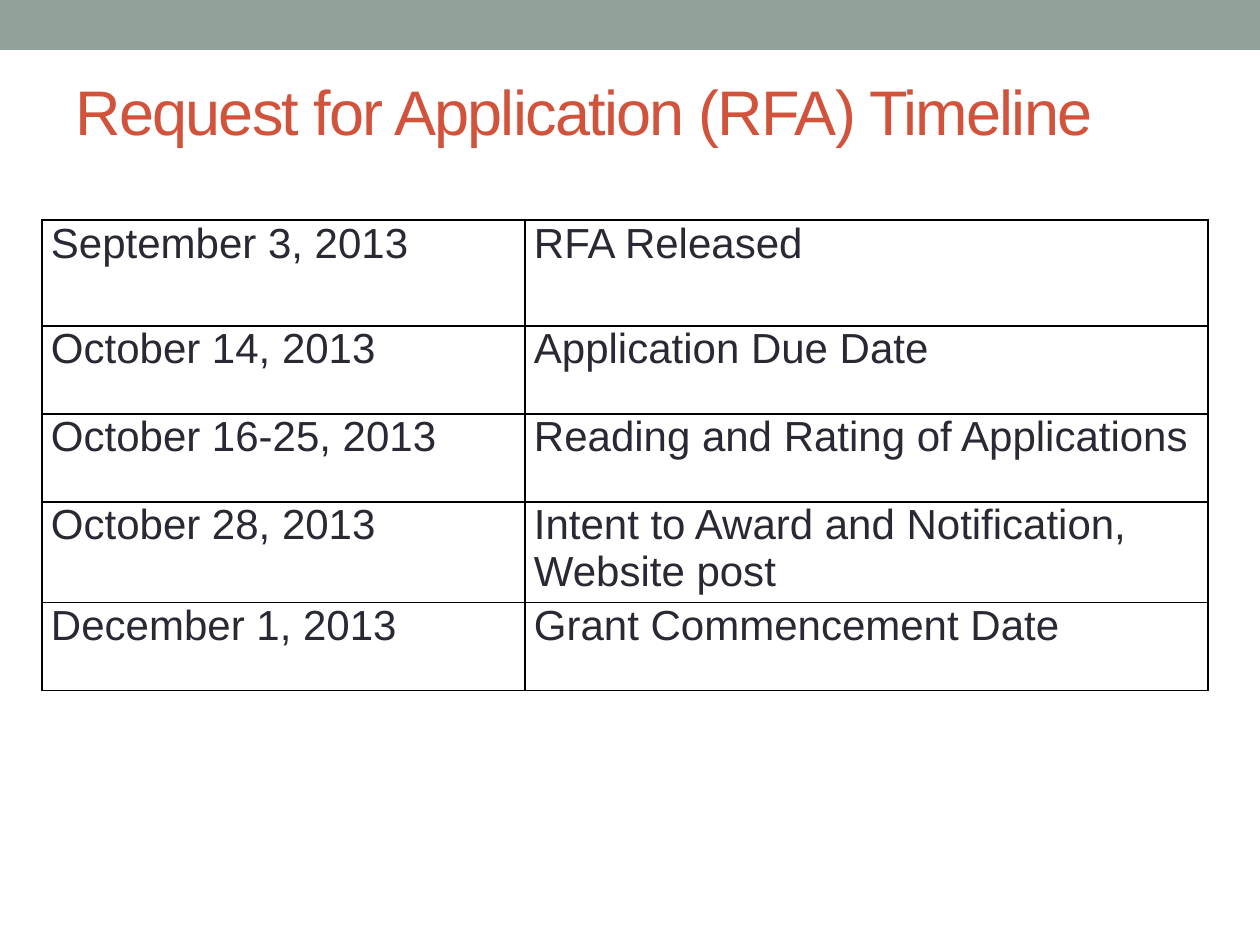
from pptx import Presentation
from pptx.dml.color import RGBColor
from pptx.enum.shapes import MSO_SHAPE as SHAPE
from pptx.enum.text import MSO_ANCHOR as ANCHOR
from pptx.oxml import parse_xml
from pptx.oxml.ns import nsdecls
from pptx.util import Pt

EMU_PER_PX = 914400 / 126
TIMELINE = [
    ("September 3, 2013", "RFA Released"),
    ("October 14, 2013", "Application Due Date"),
    ("October 16-25, 2013", "Reading and Rating of Applications"),
    ("October 28, 2013", "Intent to Award and Notification, Website post"),
    ("December 1, 2013", "Grant Commencement Date"),
]


def px(n):
    return round(n * EMU_PER_PX)


def rgb(value):
    return RGBColor.from_string(value)


class Deck:
    """Holds the style and the current slide, and draws its elements."""

    font = "Arial"
    bar_color = "93A299"
    title_color = "D2533C"
    text_color = "292934"
    border_color = "000000"

    def __init__(self, width, height):
        self.prs = Presentation()
        self.prs.slide_width, self.prs.slide_height = px(width), px(height)
        self.s = self.prs.slides.add_slide(self.prs.slide_layouts[6])

    def text(self, tf, text, size, color):
        tf.text = text
        r = tf.paragraphs[0].runs[0]
        r.font.name, r.font.size = self.font, Pt(size)
        r.font.color.rgb = rgb(color)
        return r

    def bar(self, x, y, w, h):
        sp = self.s.shapes.add_shape(SHAPE.RECTANGLE, px(x), px(y), px(w), px(h))
        sp.shadow.inherit = False
        sp.fill.solid()
        sp.fill.fore_color.rgb = rgb(self.bar_color)
        sp.line.fill.background()

    def title(self, text, x, y, w, h):
        sp = self.s.shapes.add_textbox(px(x), px(y), px(w), px(h))
        tf = sp.text_frame
        tf.word_wrap = True
        tf.vertical_anchor = ANCHOR.MIDDLE
        r = self.text(tf, text, 36, self.title_color)
        r._r.get_or_add_rPr().set("spc", "-100")

    def borders(self, cell):
        tcPr = cell._tc.get_or_add_tcPr()
        for side in "LRTB":
            tcPr.append(parse_xml(
                f'<a:ln{side} {nsdecls("a")} w="{Pt(1)}"><a:solidFill>'
                f'<a:srgbClr val="{self.border_color}"/></a:solidFill></a:ln{side}>'
            ))

    def table(self, rows, x, y, widths, heights):
        frame = self.s.shapes.add_table(
            len(rows), len(widths), px(x), px(y), px(sum(widths)), px(sum(heights)))
        table = frame.table
        table.first_row = table.horz_banding = False
        for column, width in zip(table.columns, widths):
            column.width = px(width)
        for row, height, texts in zip(table.rows, heights, rows):
            row.height = px(height)
            for cell, text in zip(row.cells, texts):
                cell.margin_left = cell.margin_right = px(9)
                cell.margin_top = cell.margin_bottom = 0
                self.borders(cell)
                cell.fill.background()
                self.text(cell.text_frame, text, 24, self.text_color)


def main():
    deck = Deck(1260, 945)
    deck.bar(0, 0, 1260, 50)
    deck.title("Request for Application (RFA) Timeline", 63, 63, 1134, 94)
    deck.table(TIMELINE, 42, 220, [483, 683], [106] + [88] * 4)
    deck.prs.save("out.pptx")


if __name__ == "__main__":
    main()
